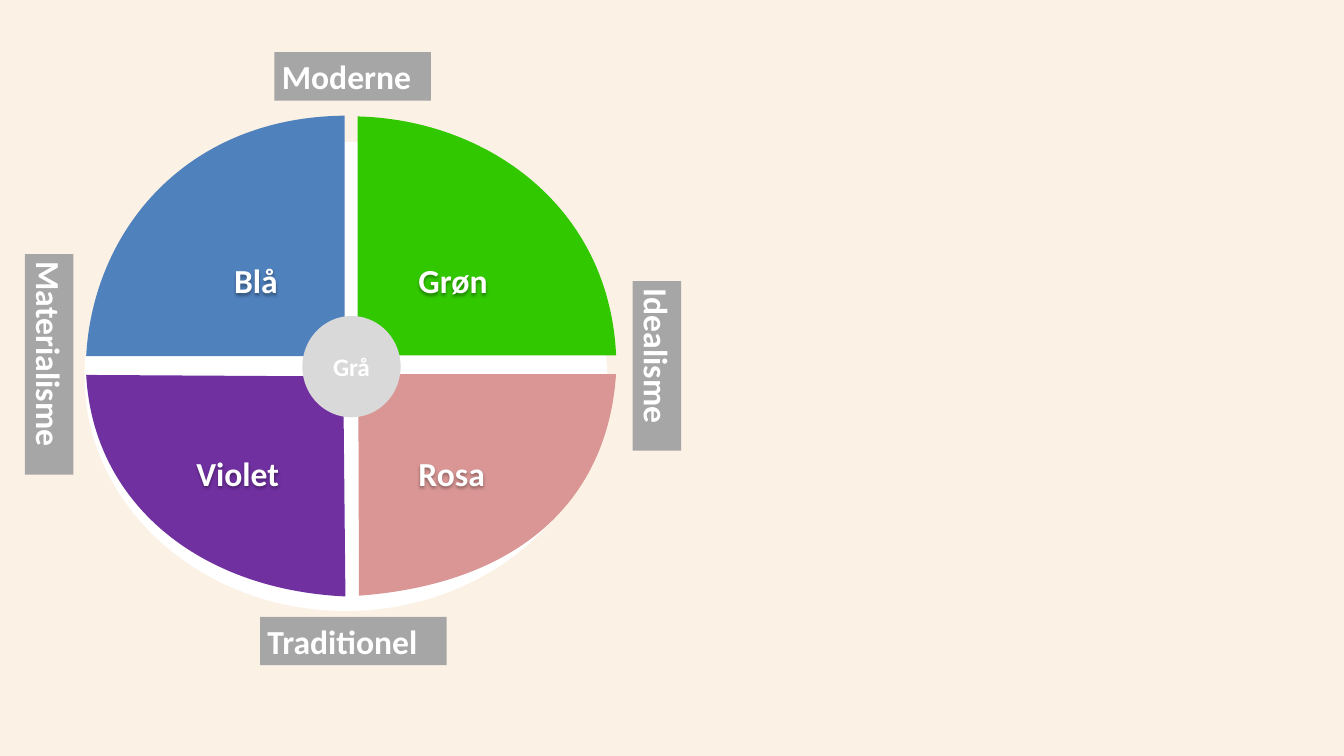
import math

from lxml import etree
from pptx import Presentation
from pptx import util as u
from pptx.dml.color import RGBColor
from pptx.enum import shapes, text
from pptx.oxml import ns

FONT = "Calibri"
WHITE = "FFFFFF"
GREY = "A6A6A6"

BOTTOM_LABEL = ("Traditionel", 3.44, 8.16, 2.47, 0)
OTHER_LABELS = [
    ("Materialisme", -0.81, 4.5, 2.92, 90),
    ("Idealisme", 7.57, 4.52, 2.24, 90),
    ("Moderne", 3.63, 0.69, 2.07, 0),
]
AXIS_HEIGHT = 0.64

SEGMENTS = [
    ("7030A0", (0.99, 4.38, 4.49, 3.07), 36.6,
     [(1.14, 4.96), (4.54, 4.98), (4.57, 7.89), (2.63, 7.8), (1.23, 6.65), (1.14, 4.96)]),
    ("D99694", (3.83, 4.35, 4.48, 3.11), 323.4,
     [(8.15, 4.95), (4.74, 4.95), (4.75, 7.88), (6.88, 7.72), (8.04, 6.61), (8.15, 4.95)]),
    ("4F81BD", (0.93, 2, 4.65, 3.28), 322.4,
     [(1.14, 4.71), (4.56, 4.71), (4.56, 1.53), (2.45, 1.55), (1.23, 3.06), (1.14, 4.71)]),
    ("32C800", (3.62, 1.87, 4.6, 3.32), 232.4,
     [(4.73, 1.54), (4.73, 4.7), (8.15, 4.7), (8.06, 2.72), (6.43, 1.58), (4.73, 1.54)]),
]
SEGMENT_LABELS = [
    ("Blå", 2.48, 3.35),
    ("Grøn", 5.09, 3.35),
    ("Violet", 2.24, 5.9),
    ("Rosa", 5.07, 5.9),
]
LABEL_SIZE = (1.81, 0.71)


def colour(value):
    return RGBColor.from_string(value)


def paint(shape, fill=None, line=None, line_width=0, shadow=False):
    if not shadow:
        shape.shadow.inherit = False
    if fill:
        shape.fill.solid()
        shape.fill.fore_color.rgb = colour(fill)
    else:
        shape.fill.background()
    if line:
        shape.line.color.rgb = colour(line)
        shape.line.width = u.Pt(line_width)
    else:
        shape.line.fill.background()


def add_shape(slide, kind, left, top, width, height, **style):
    shape = slide.shapes.add_shape(
        kind, u.Inches(left), u.Inches(top), u.Inches(width), u.Inches(height))
    paint(shape, **style)
    return shape


def write(shape, words, size=32, align=text.PP_ALIGN.CENTER,
          anchor=text.MSO_ANCHOR.MIDDLE):
    frame = shape.text_frame
    frame.word_wrap = True
    frame.vertical_anchor = anchor
    paragraph = frame.paragraphs[0]
    paragraph.alignment = align
    run = paragraph.add_run()
    run.text = words
    run.font.name = FONT
    run.font.size = u.Pt(size)
    run.font.bold = True
    run.font.color.rgb = colour(WHITE)


def add_axis_label(slide, name, left, top, width, rotation):
    label = add_shape(slide, shapes.MSO_SHAPE.RECTANGLE,
                      left, top, width, AXIS_HEIGHT, fill=GREY)
    label.rotation = rotation
    write(label, name, align=text.PP_ALIGN.LEFT, anchor=text.MSO_ANCHOR.TOP)


def turn_back(point, frame, rotation):
    left, top, width, height = frame
    x, y = point[0] - left - width / 2, point[1] - top - height / 2
    cosine, sine = math.cos(math.radians(rotation)), math.sin(math.radians(rotation))
    return (u.Inches(x * cosine + y * sine + width / 2),
            u.Inches(y * cosine - x * sine + height / 2))


def add_segment(slide, fill, frame, rotation, points):
    local = [turn_back(point, frame, rotation) for point in points]
    builder = slide.shapes.build_freeform(*local[0])
    builder.add_line_segments(local[1:], close=True)
    shape = builder.convert_to_shape()
    shape.left, shape.top, shape.width, shape.height = map(u.Inches, frame)
    shape.rotation = rotation
    paint(shape, fill=fill)

    outline = next(shape._element.iter(ns.qn("a:pathLst")))[0]
    outline.set("w", str(shape.width))
    outline.set("h", str(shape.height))
    for node, (x, y) in zip(outline.iter(ns.qn("a:pt")), local):
        node.set("x", str(x))
        node.set("y", str(y))
    lines = outline.findall(ns.qn("a:lnTo"))[-3:]
    curve = etree.Element(ns.qn("a:cubicBezTo"))
    lines[0].addprevious(curve)
    for line in lines:
        curve.append(line[0])
        outline.remove(line)


def main():
    presentation = Presentation()
    presentation.slide_width = u.Inches(17.78)
    presentation.slide_height = u.Inches(10)
    slide = presentation.slides.add_slide(presentation.slide_layouts[6])
    slide.background.fill.solid()
    slide.background.fill.fore_color.rgb = colour("FBF2E5")

    kinds = shapes.MSO_SHAPE
    add_axis_label(slide, *BOTTOM_LABEL)
    add_shape(slide, kinds.OVAL, 1.16, 1.92, 6.83, 6.12,
              fill=WHITE, line=WHITE, line_width=6)
    for segment in SEGMENTS:
        add_segment(slide, *segment)
    centre = add_shape(slide, kinds.OVAL, 4, 4.18, 1.3, 1.34, fill="D9D9D9")
    write(centre, "Grå", size=24)
    for name, left, top in SEGMENT_LABELS:
        label = add_shape(slide, kinds.ROUNDED_RECTANGLE, left, top, *LABEL_SIZE, shadow=True)
        write(label, name)
    for label in OTHER_LABELS:
        add_axis_label(slide, *label)

    presentation.save("out.pptx")


if __name__ == "__main__":
    main()
